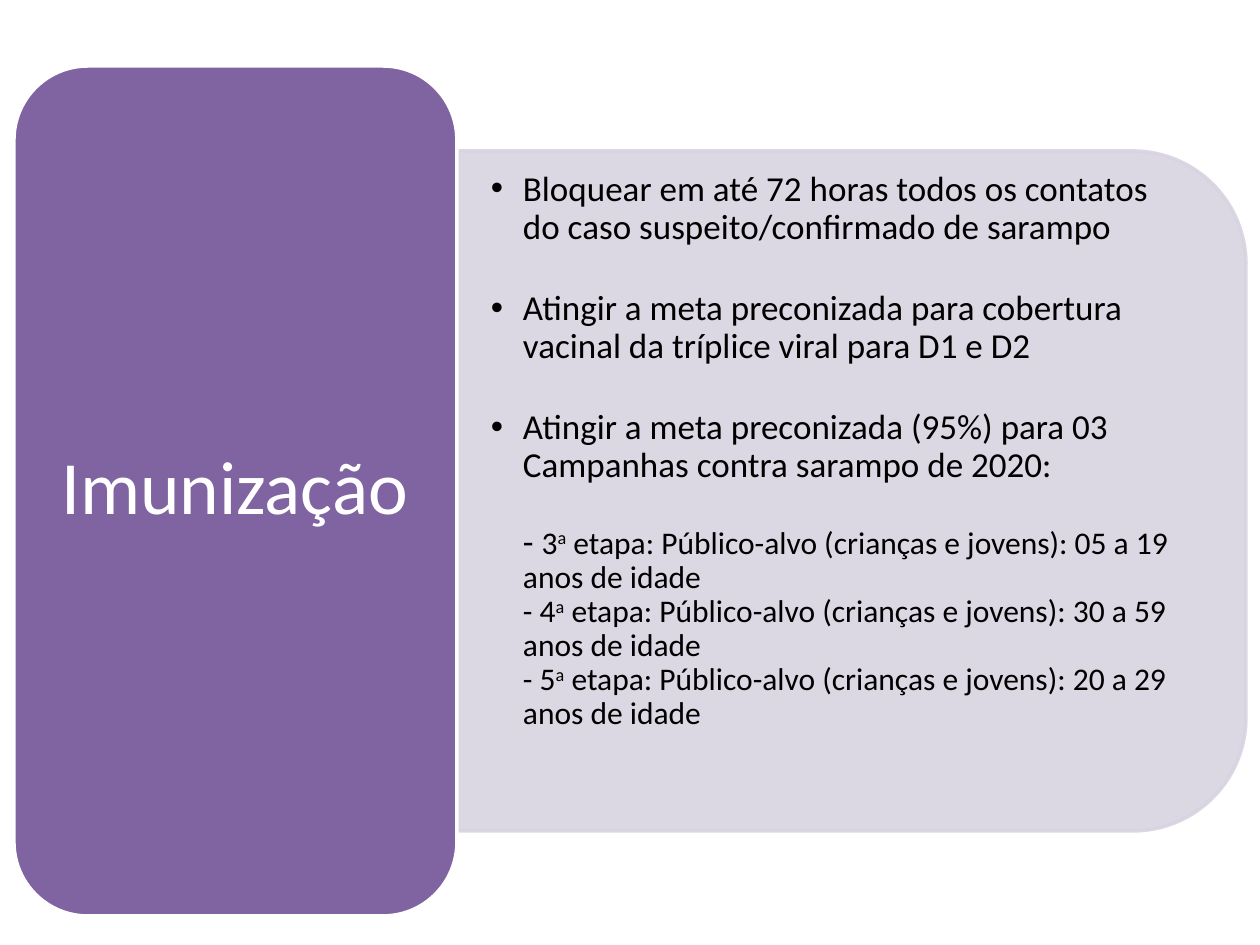
from dataclasses import dataclass

from lxml import etree
from pptx import Presentation
from pptx.dml.color import RGBColor
from pptx.enum import shapes, text
from pptx.oxml.ns import qn
from pptx.util import Emu, Pt

PX = 914400 // 126
PURPLE = RGBColor(0x80, 0x64, 0xA2)
LILAC = RGBColor(0xD8, 0xD3, 0xE0)
WHITE = RGBColor(0xFF, 0xFF, 0xFF)
BLACK = RGBColor(0x00, 0x00, 0x00)
INDENT = 32

GOALS = (
    "Bloquear em até 72 horas todos os contatos do caso suspeito/confirmado de sarampo",
    "Atingir a meta preconizada para cobertura vacinal da tríplice viral para D1 e D2",
    "Atingir a meta preconizada (95%) para 03 Campanhas contra sarampo de 2020:",
)


@dataclass(frozen=True)
class Box:
    x: int
    y: int
    w: int
    h: int


@dataclass(frozen=True)
class Panel:
    kind: shapes.MSO_SHAPE
    box: Box
    fill: RGBColor
    line: RGBColor
    turn: int = 0
    alpha: int = 100


@dataclass(frozen=True)
class Stage:
    num: int
    ages: str
    dash: int = 18


PANELS = (
    Panel(shapes.MSO_SHAPE.ROUND_2_SAME_RECTANGLE, Box(512, 97, 680, 788),
          LILAC, LILAC, turn=90, alpha=90),
    Panel(shapes.MSO_SHAPE.ROUNDED_RECTANGLE, Box(14, 66, 443, 850), PURPLE, WHITE),
)
STAGES = (Stage(3, "05 a 19", dash=20), Stage(4, "30 a 59"), Stage(5, "20 a 29"))


def px(n: int) -> Emu:
    return Emu(n * PX)


def place(item, box: Box) -> None:
    item.left, item.top = px(box.x), px(box.y)
    item.width, item.height = px(box.w), px(box.h)


def draw(slide, panel: Panel, rank: int) -> None:
    box = panel.box
    item = slide.shapes.add_shape(panel.kind, px(box.x), px(box.y), px(box.w), px(box.h))
    item.rotation = panel.turn
    item.shadow.inherit = False
    item.fill.solid()
    item.fill.fore_color.rgb = panel.fill
    item.line.color.rgb = panel.line
    item.line.width = Pt(2)
    if panel.alpha < 100:
        for clr in item.element.spPr.iter(qn("a:srgbClr")):
            etree.SubElement(clr, qn("a:alpha")).set("val", str(panel.alpha * 1000))
    item.element.getparent().insert(2 + rank, item.element)


def setup(item, box: Box, side: int, edge: int, anchor):
    place(item, box)
    frame = item.text_frame
    frame.word_wrap = True
    frame.auto_size = text.MSO_AUTO_SIZE.NONE
    frame.vertical_anchor = anchor
    frame.margin_left = frame.margin_right = px(side)
    frame.margin_top = frame.margin_bottom = px(edge)
    return frame


def style(par, after: int = 0, align=text.PP_ALIGN.LEFT, left: int = 0,
          bullet: bool = False) -> None:
    props = par._p.get_or_add_pPr()
    props.set("marL", str(px(left)))
    props.set("indent", str(-px(left) if bullet else 0))
    if bullet:
        etree.SubElement(props, qn("a:buChar")).set("char", "•")
    else:
        etree.SubElement(props, qn("a:buNone"))
    par.alignment = align
    par.line_spacing = 0.9
    par.space_before = Pt(0)
    par.space_after = Pt(after)


def write(par, words: str, size: int = 18, color: RGBColor = BLACK, rise: int = 0) -> None:
    run = par.add_run()
    run.text = words
    run.font.name = "Calibri"
    run.font.size = Pt(size)
    run.font.color.rgb = color
    if rise:
        run.font._element.set("baseline", str(rise * 1000))


def main() -> None:
    """Build the immunisation slide."""
    deck = Presentation()
    deck.slide_width, deck.slide_height = px(1260), px(945)
    slide = deck.slides.add_slide(deck.slide_layouts[1])
    for rank, panel in enumerate(PANELS):
        draw(slide, panel, rank)

    head = setup(slide.shapes.title, Box(35, 87, 399, 806), 23, 11, text.MSO_ANCHOR.MIDDLE)
    par = head.paragraphs[0]
    style(par, align=text.PP_ALIGN.CENTER)
    write(par, "Imunização", size=43, color=WHITE)

    body = setup(slide.placeholders[1], Box(457, 153, 755, 645), 34, 18, text.MSO_ANCHOR.TOP)
    for i, goal in enumerate(GOALS):
        par = body.add_paragraph() if i else body.paragraphs[0]
        style(par, after=25 if i < len(GOALS) - 1 else 22, left=INDENT, bullet=True)
        write(par, goal, size=20)
    for stage in STAGES:
        par = body.add_paragraph()
        style(par, left=INDENT)
        write(par, "- ", size=stage.dash)
        write(par, str(stage.num))
        write(par, "a", rise=30)
        write(par, f" etapa: Público-alvo (crianças e jovens): {stage.ages} anos de idade")
    deck.save("out.pptx")


if __name__ == "__main__":
    main()
